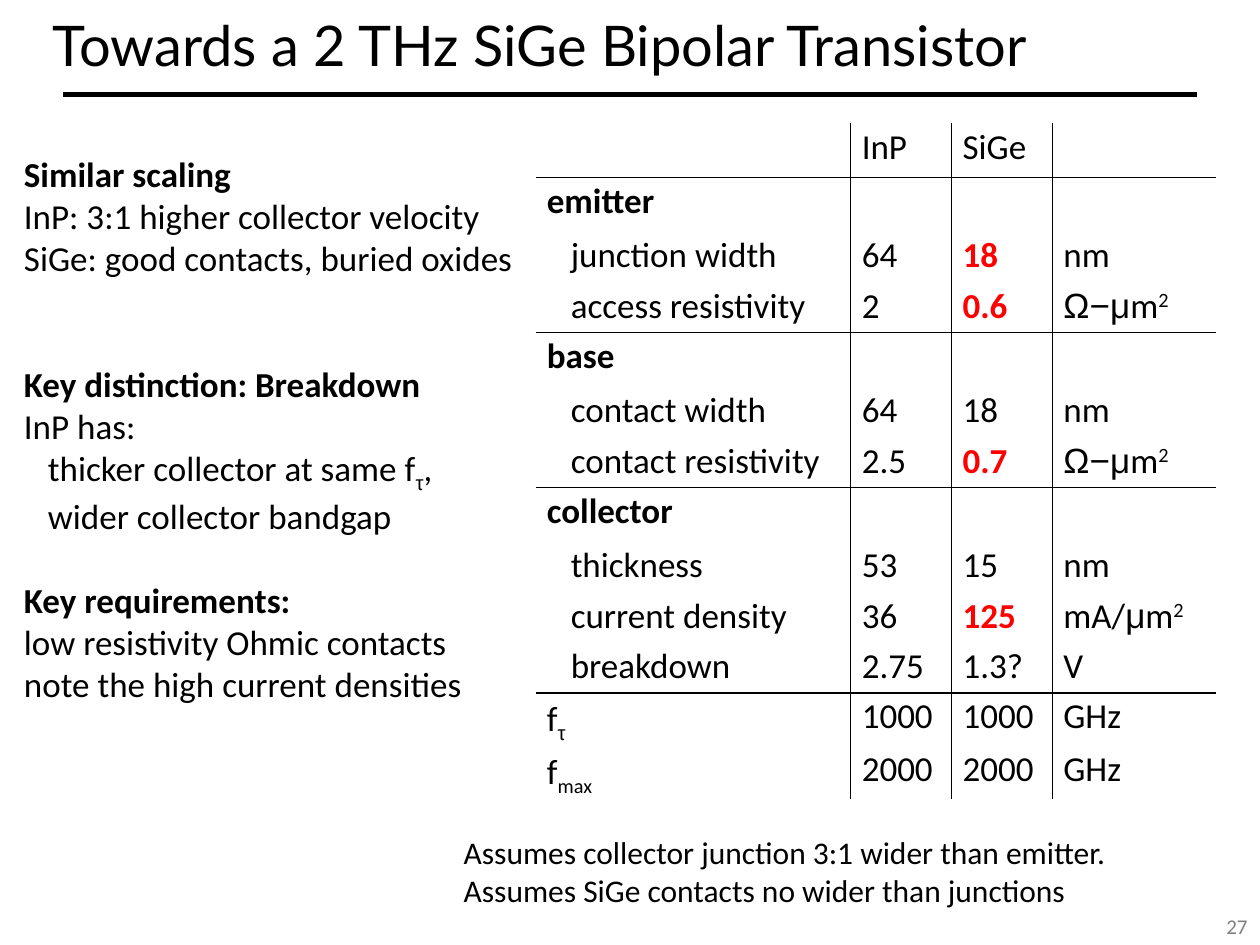
"""Build a slide comparing InP and SiGe bipolar transistor scaling targets."""
from lxml.etree import SubElement
from pptx import Presentation
from pptx.dml.color import RGBColor
from pptx.enum.shapes import MSO_CONNECTOR as Connector
from pptx.enum.text import MSO_ANCHOR as Anchor, PP_ALIGN as Align
from pptx.oxml import parse_xml
from pptx.oxml.ns import nsdecls, qn
from pptx.util import Inches, Pt

BLACK = RGBColor(0x00, 0x00, 0x00)
RED = RGBColor(0xFF, 0x00, 0x00)
GRAY = RGBColor(0x7F, 0x7F, 0x7F)
GREEK = set("Ωμτ")
SUB, SUPER = -25000, 30000
INDENT = Inches(0.19)
PLAIN_STYLE = "{2D5ABB26-0587-4C30-8999-92F81FD0307C}"

TITLE = "Towards a 2 THz SiGe Bipolar Transistor"
PAGE_NUMBER = "27"
AREA_RESISTIVITY = ["Ω−μ", "m", ("2", SUPER)]
CURRENT_DENSITY = ["mA/", "μ", "m", ("2", SUPER)]

PARAMETERS = [
    ("header", "", "InP", "SiGe", ""),
    ("section", "emitter", "", "", ""),
    ("item", "junction width", "64", "18", "nm"),
    ("item", "access resistivity", "2", "0.6", AREA_RESISTIVITY),
    ("section", "base", "", "", ""),
    ("item", "contact width", "64", "18", "nm"),
    ("item", "contact resistivity", "2.5", "0.7", AREA_RESISTIVITY),
    ("section", "collector", "", "", ""),
    ("item", "thickness", "53", "15", "nm"),
    ("item", "current density", "36", "125", CURRENT_DENSITY),
    ("item", "breakdown", "2.75", "1.3?", "V"),
    ("result", ["f", ("τ", SUB)], "1000", "1000", "GHz"),
    ("result", ["f", ("max", SUB)], "2000", "2000", "GHz"),
]
COLUMN_WIDTHS = (2.5, 0.8, 0.8, 1.3)
ROW_HEIGHTS = {"header": 0.43, "section": 0.43, "item": 0.4, "result": 0.42}
SIGE_COLUMN = 3
HIGHLIGHTED_ROWS = {2, 3, 6, 9}
RULED_ROWS = {0, 3, 6, 10}

ARGUMENT = [
    ("Similar scaling", "heading", 0),
    ("InP: 3:1 higher collector velocity", "body", 0),
    ("SiGe: good contacts, buried oxides", "body", 0),
    ("Key distinction: Breakdown", "heading", 48),
    ("InP has:", "body", 0),
    (["thicker collector at same f", ("τ", SUB), ","], "indented", 0),
    ("wider collector bandgap", "indented", 0),
    ("Key requirements:", "heading", 24),
    ("low resistivity Ohmic contacts", "body", 0),
    ("note the high current densities", "body", 0),
]
ASSUMPTIONS = [
    ("Assumes collector junction 3:1 wider than emitter.", "body", 0),
    ("Assumes SiGe contacts no wider than junctions", "body", 0),
]


def write(paragraph, content, size, color=BLACK, bold=False, font="Calibri", indent=0):
    if indent:
        paragraph._p.get_or_add_pPr().set("marL", str(indent))
    for piece in [content] if isinstance(content, str) else content:
        text, baseline = (piece, 0) if isinstance(piece, str) else piece
        run = paragraph.add_run()
        run.text = text
        run.font.name = "Arial" if GREEK & set(text) else font
        run.font.size = Pt(size)
        run.font.bold = bold
        run.font.color.rgb = color
        if baseline:
            run._r.get_or_add_rPr().set("baseline", str(baseline))


def add_frame(slide, left, top, width, height, margins=(0.1, 0.05)):
    frame = slide.shapes.add_textbox(*map(Inches, (left, top, width, height))).text_frame
    frame.word_wrap = True
    frame.margin_left = frame.margin_right = Inches(margins[0])
    frame.margin_top = frame.margin_bottom = Inches(margins[1])
    return frame


def write_lines(frame, lines, size):
    for index, (content, role, gap) in enumerate(lines):
        paragraph = frame.paragraphs[0] if index == 0 else frame.add_paragraph()
        if gap:
            paragraph.space_before = Pt(gap)
        write(paragraph, content, size, bold=role == "heading",
              indent=INDENT if role == "indented" else 0)


def set_borders(cell, widths):
    properties = cell._tc.get_or_add_tcPr()
    for index, (side, width) in enumerate(widths.items()):
        paint = f'<a:solidFill><a:srgbClr val="{BLACK}"/></a:solidFill>' if width else "<a:noFill/>"
        properties.insert(index, parse_xml(
            f'<a:ln{side} {nsdecls("a")} w="{int(Pt(width))}">{paint}</a:ln{side}>'))


def add_parameter_table(slide):
    heights = [ROW_HEIGHTS[row[0]] for row in PARAMETERS]
    table = slide.shapes.add_table(
        len(PARAMETERS), len(COLUMN_WIDTHS), Inches(4.25), Inches(0.98),
        Inches(sum(COLUMN_WIDTHS)), Inches(sum(heights))).table
    table.first_row = table.horz_banding = False
    table._tbl.tblPr.find(qn("a:tableStyleId")).text = PLAIN_STYLE
    for column, width in zip(table.columns, COLUMN_WIDTHS):
        column.width = Inches(width)
    last_column = len(COLUMN_WIDTHS) - 1
    for r, (kind, *contents) in enumerate(PARAMETERS):
        table.rows[r].height = Inches(heights[r])
        for c, content in enumerate(contents):
            cell = table.cell(r, c)
            cell.margin_left = cell.margin_right = Inches(0.09)
            cell.margin_top = cell.margin_bottom = Inches(0.04)
            cell.fill.background()
            set_borders(cell, {
                "L": 0.25 if c else 0,
                "R": 0.25 if c < last_column else 0,
                "T": 1 if r - 1 in RULED_ROWS else 0,
                "B": 1 if r in RULED_ROWS else 0,
            })
            paragraph = cell.text_frame.paragraphs[0]
            paragraph.line_spacing = 0.9
            if not content:
                paragraph.font.size = Pt(20)
                continue
            highlighted = c + 1 == SIGE_COLUMN and r in HIGHLIGHTED_ROWS
            write(paragraph, content, 20, RED if highlighted else BLACK,
                  bold=highlighted or kind == "section",
                  indent=INDENT if kind == "item" and c == 0 else 0)


def main():
    deck = Presentation()
    deck.slide_width, deck.slide_height = Inches(10), Inches(7.5)
    slide = deck.slides.add_slide(deck.slide_layouts[6])

    title_rule = slide.shapes.add_connector(
        Connector.STRAIGHT, Inches(0.5), Inches(0.75), Inches(9.5), Inches(0.75))
    title_rule.line.color.rgb = BLACK
    title_rule.line.width = Pt(3)
    SubElement(title_rule._element.spPr, qn("a:effectLst"))

    page = add_frame(slide, 9.42, 7.22, 0.58, 0.28).paragraphs[0]
    page.alignment = Align.RIGHT
    page.line_spacing = 0.9
    write(page, PAGE_NUMBER, 12, GRAY)

    heading = add_frame(slide, 0.42, 0.17, 9.5, 0.44, margins=(0, 0))
    heading.vertical_anchor = Anchor.MIDDLE
    heading.paragraphs[0].line_spacing = 0.87
    write(heading.paragraphs[0], TITLE, 32, font="Lato")

    add_parameter_table(slide)
    write_lines(add_frame(slide, 0.1, 1.17, 5.08, 4.8, (0.09, 0.04)), ARGUMENT, 20)
    write_lines(add_frame(slide, 3.59, 6.57, 6.08, 0.7, (0.09, 0.04)), ASSUMPTIONS, 18)
    deck.save("out.pptx")


if __name__ == "__main__":
    main()
